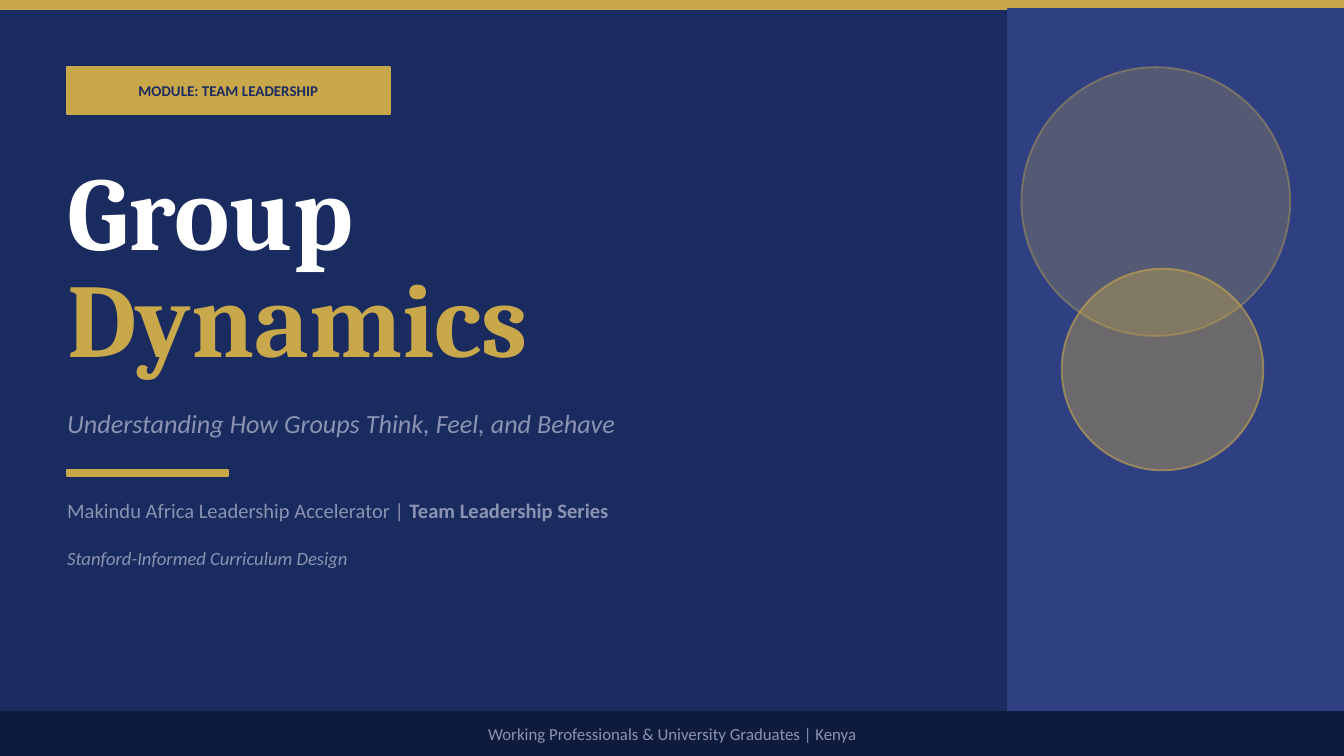
"""Build the Group Dynamics title slide."""
from pptx import Presentation
from pptx.dml.color import RGBColor
from pptx.enum.shapes import MSO_SHAPE as Preset
from pptx.enum.text import MSO_ANCHOR as Anchor, PP_ALIGN as Align
from pptx.oxml.ns import qn
from pptx.util import Pt
from lxml.etree import SubElement

COLORS = {
    "navy": "1A2B5F", "panel": "2E4082", "gold": "C9A84C",
    "white": "FFFFFF", "muted": "8A93B2", "footer": "0F1B3C",
}
WIDTH, HEIGHT = 720, 405
LEFT, TEXT_WIDTH = 36, 468
BADGE = (LEFT, 36, 172.8, 25.2)
FOOTER = (0, 381.6, WIDTH, 23.04)

BARS = [
    ((0, 0, WIDTH, 5.04), "gold"),
    ((540, 5.04, 180, 399.6), "panel"),
    (BADGE, "gold"),
    ((LEFT, 252, 86.4, 2.88), "gold"),
    (FOOTER, "footer"),
]
CIRCLES = [
    ((547.2, 36, 144, 144), 25, 40),
    ((568.8, 144, 108, 108), 40, 60),
]
LABELS = [
    (BADGE, "MODULE: TEAM LEADERSHIP", 8, "navy", "bold"),
    (FOOTER, "Working Professionals & University Graduates | Kenya", 9, "muted", ""),
]
HEADINGS = [
    (79.2, 64.8, "Group", 56, "white"),
    (136.8, 64.8, "Dynamics", 56, "gold"),
]
LINES = [
    (208.8, 36, "Understanding How Groups Think, Feel, and Behave", 14, "italic"),
    (262.8, 21.6, "Makindu Africa Leadership Accelerator | ", 11, ""),
    (288, 21.6, "Stanford-Informed Curriculum Design", 10, "italic"),
]
SERIES = "Team Leadership Series"


def rgb(name):
    return RGBColor.from_string(COLORS[name])


def add_figure(page, preset, frame, color, opacities=()):
    shape = page.shapes.add_shape(preset, *map(Pt, frame))
    shape.shadow.inherit = False
    shape.fill.solid()
    shape.fill.fore_color.rgb = rgb(color)
    shape.line.color.rgb = rgb(color)
    shape.line.width = Pt(1)
    tints = shape._element.spPr.findall(".//" + qn("a:srgbClr"))
    for tint, percent in zip(tints, opacities):
        SubElement(tint, qn("a:alpha"), val=str(percent * 1000))


def add_text(page, frame, text, size, color, style="", align=Align.LEFT, face="Calibri"):
    box = page.shapes.add_textbox(*map(Pt, frame))
    body = box.text_frame
    body.word_wrap = True
    body.vertical_anchor = Anchor.MIDDLE
    body.margin_left = body.margin_right = body.margin_top = body.margin_bottom = 0
    para = body.paragraphs[0]
    para.alignment = align
    para.add_run().text = text
    font = para.font
    font.name, font.size = face, Pt(size)
    font.color.rgb = rgb(color)
    font.bold, font.italic = style == "bold", style == "italic"
    return para


def main():
    deck = Presentation()
    deck.slide_width, deck.slide_height = Pt(WIDTH), Pt(HEIGHT)
    page = deck.slides.add_slide(deck.slide_layouts[6])
    page.background.fill.solid()
    page.background.fill.fore_color.rgb = rgb("navy")

    for frame, color in BARS:
        add_figure(page, Preset.RECTANGLE, frame, color)
    for frame, *opacities in CIRCLES:
        add_figure(page, Preset.OVAL, frame, "gold", opacities)

    for frame, text, size, color, style in LABELS:
        add_text(page, frame, text, size, color, style, Align.CENTER)
    for top, height, text, size, color in HEADINGS:
        add_text(page, (LEFT, top, TEXT_WIDTH, height), text, size, color, "bold", face="Cambria")
    for top, height, text, size, style in LINES:
        para = add_text(page, (LEFT, top, TEXT_WIDTH, height), text, size, "muted", style)
        if text.endswith("| "):
            span = para.add_run()
            span.text = SERIES
            span.font.bold = True

    deck.save("out.pptx")


if __name__ == "__main__":
    main()
